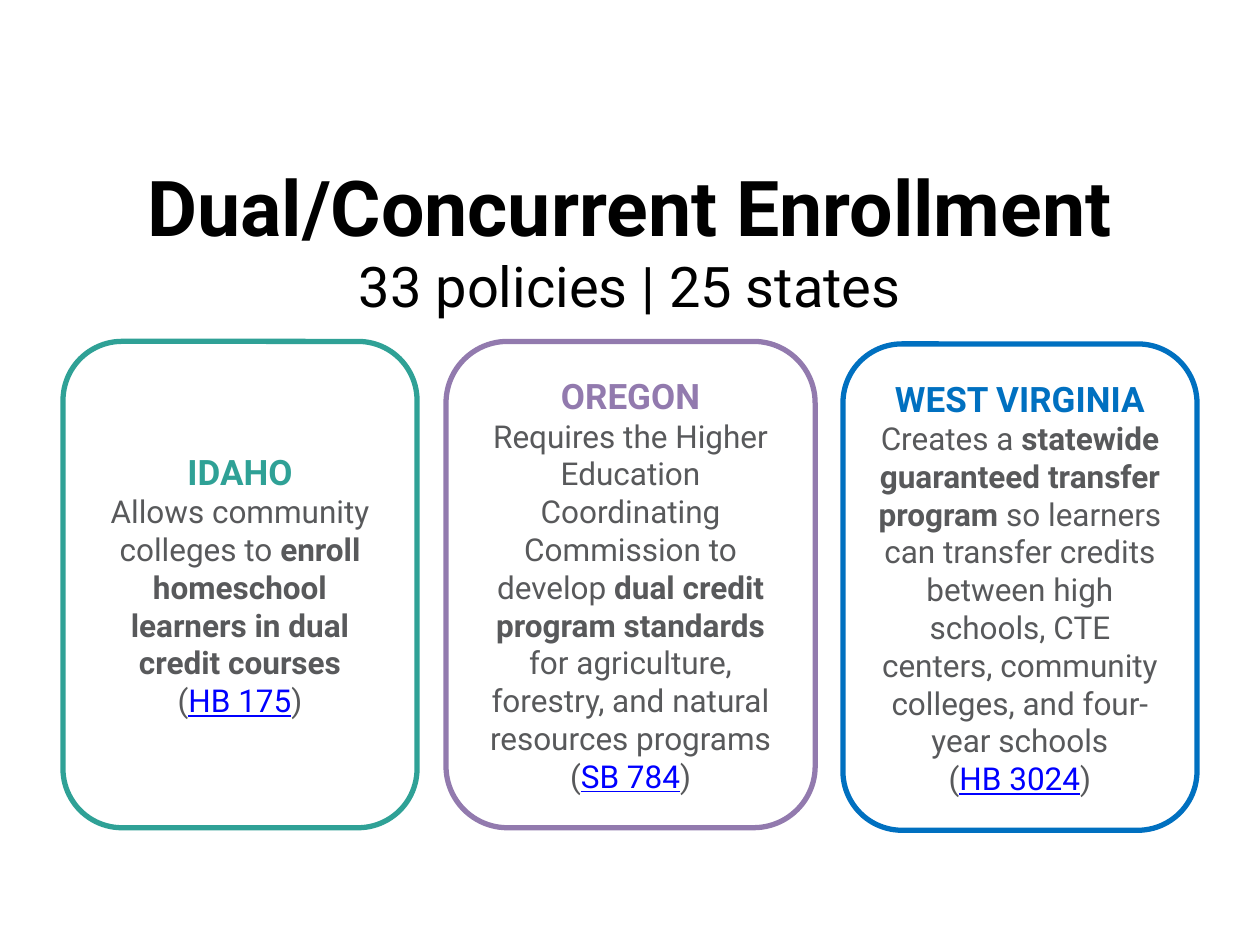
import pptx
import pptx.util
import pptx.dml.color
import pptx.enum.shapes
import pptx.enum.text

Inches, Pt = pptx.util.Inches, pptx.util.Pt
RGBColor = pptx.dml.color.RGBColor
PP_ALIGN = pptx.enum.text.PP_ALIGN
MSO_ANCHOR = pptx.enum.text.MSO_ANCHOR

FONT = "Roboto"
BLACK = RGBColor(0x00, 0x00, 0x00)
WHITE = RGBColor(0xFF, 0xFF, 0xFF)
GRAY = RGBColor(0x58, 0x59, 0x5B)
LINK = RGBColor(0x00, 0x00, 0xFF)
TEAL = RGBColor(0x2F, 0xA1, 0x96)
PURPLE = RGBColor(0x92, 0x7A, 0xAE)
BLUE = RGBColor(0x00, 0x70, 0xC0)

# Left, top, width, colour, state, (text, bold) runs, bill
CARDS = [
    (0.5, 2.71, 2.81, TEAL, "IDAHO",
     [("Allows community colleges to ", False),
      ("enroll homeschool learners in dual credit courses", True)],
     "HB 175"),
    (3.54, 2.71, 2.93, PURPLE, "OREGON",
     [("Requires the Higher Education Coordinating Commission to develop ", False),
      ("dual credit program standards ", True),
      ("for agriculture, forestry, and natural resources programs", False)],
     "SB 784"),
    (6.69, 2.73, 2.81, BLUE, "WEST VIRGINIA",
     [("Creates a ", False),
      ("statewide guaranteed transfer program", True),
      (" so learners can transfer credits between high schools, CTE centers, "
       "community colleges, and four-year schools", False)],
     "HB 3024"),
]
CARD_HEIGHT = 3.86


def style(p, size, color, bold=None):
    p.alignment = PP_ALIGN.CENTER
    p.font.name = FONT
    p.font.size = Pt(size)
    p.font.color.rgb = color
    p.font.bold = bold


def add_heading(slide, left, top, width, height, text, size, bold, anchor):
    tf = slide.shapes.add_textbox(
        Inches(left), Inches(top), Inches(width), Inches(height)).text_frame
    tf.word_wrap = True
    tf.vertical_anchor = anchor
    p = tf.paragraphs[0]
    p.text = text
    style(p, size, BLACK, bold)


def add_card(slide, left, top, width, height, color, state, summary, bill):
    sp = slide.shapes.add_shape(
        pptx.enum.shapes.MSO_SHAPE.ROUNDED_RECTANGLE,
        Inches(left), Inches(top), Inches(width), Inches(height))
    sp.shadow.inherit = False
    sp.fill.solid()
    sp.fill.fore_color.rgb = WHITE
    sp.line.color.rgb = color
    sp.line.width = Pt(3)
    tf = sp.text_frame
    tf.word_wrap = True
    tf.vertical_anchor = MSO_ANCHOR.MIDDLE

    # State name
    p = tf.paragraphs[0]
    p.text = state
    style(p, 20, color, True)

    # Policy summary
    p = tf.add_paragraph()
    style(p, 18, GRAY)
    for text, bold in summary:
        r = p.add_run()
        r.text = text
        r.font.bold = bold

    # Bill number
    p = tf.add_paragraph()
    style(p, 18, GRAY, False)
    for text in ("(", bill, ")"):
        r = p.add_run()
        r.text = text
        if text == bill:
            r.font.color.rgb = LINK
            r.font.underline = True


def main():
    prs = pptx.Presentation()
    prs.slide_width, prs.slide_height = Inches(10), Inches(7.5)
    slide = prs.slides.add_slide(prs.slide_layouts[6])

    # Title and subtitle
    add_heading(slide, 0.5, 1.08, 9, 1.11, "Dual/Concurrent Enrollment",
                44, True, MSO_ANCHOR.MIDDLE)
    add_heading(slide, 0.5, 1.95, 9, 0.65, "33 policies | 25 states",
                32, False, MSO_ANCHOR.TOP)

    # State cards
    for left, top, width, *content in CARDS:
        add_card(slide, left, top, width, CARD_HEIGHT, *content)

    prs.save("out.pptx")


if __name__ == "__main__":
    main()
